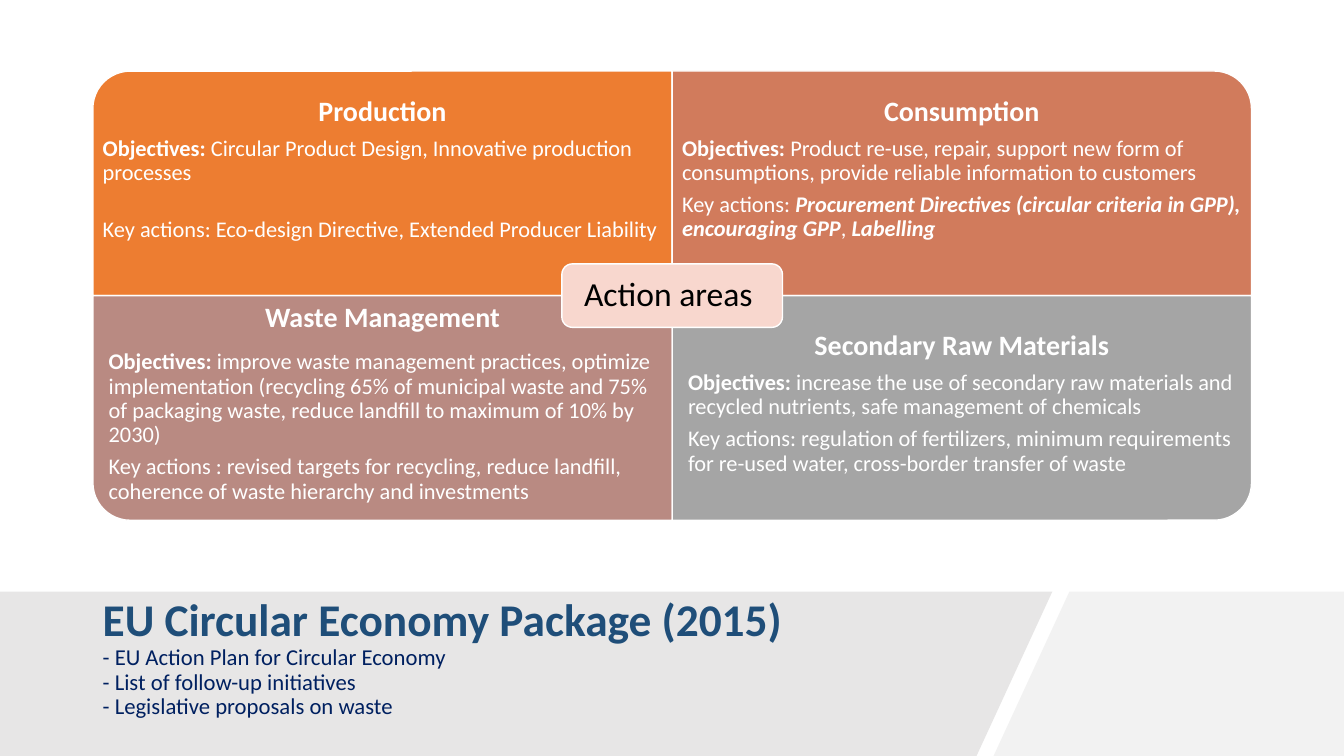
from pptx import Presentation
from pptx.dml.color import RGBColor
from pptx.enum import shapes, text
from pptx.util import Cm, Pt

FONT = "Calibri"
WHITE = "FFFFFF"
SLIDE_W, SLIDE_H = 33.87, 19.05


def rgb(value):
    return RGBColor.from_string(value)


def paint(shape, fill, line=None):
    shape.shadow.inherit = False
    shape.fill.solid()
    shape.fill.fore_color.rgb = rgb(fill)
    if line:
        shape.line.color.rgb = rgb(line)
        shape.line.width = Pt(1)
    else:
        shape.line.fill.background()


def write(frame, paragraphs):
    """Each paragraph: (runs, size, colour, alignment, space after); run: (words, style)."""
    frame.word_wrap = True
    for index, (runs, size, colour, align, after) in enumerate(paragraphs):
        line = frame.paragraphs[0] if index == 0 else frame.add_paragraph()
        line.alignment = align
        line.line_spacing = 0.9
        line.space_after = Pt(after)
        line.font.name = FONT
        line.font.size = Pt(size)
        line.font.color.rgb = rgb(colour)
        for words, style in runs:
            run = line.add_run()
            run.text = words
            if "b" in style:
                run.font.bold = True
            if "i" in style:
                run.font.italic = True


def text_box(slide, left, top, width, height, inset, paragraphs):
    frame = slide.shapes.add_textbox(Cm(left), Cm(top), Cm(width), Cm(height)).text_frame
    frame.margin_left = frame.margin_right = Cm(inset)
    frame.margin_top = frame.margin_bottom = 0
    write(frame, paragraphs)


def add_panel(slide, left, top, width, height, rotation, area):
    """Quadrant whose single rounded corner is turned to the outside."""
    w, h = (height, width) if rotation % 180 else (width, height)
    panel = slide.shapes.add_shape(
        shapes.MSO_SHAPE.ROUND_1_RECTANGLE,
        Cm(left + (width - w) / 2), Cm(top + (height - h) / 2), Cm(w), Cm(h))
    panel.rotation = rotation
    paint(panel, area["fill"], WHITE)

    heading_gap, objective_gap = area["gaps"]
    centre, start = text.PP_ALIGN.CENTER, text.PP_ALIGN.LEFT
    objectives = [("Objectives: ", "b"), (area["objectives"], "")]
    text_box(slide, left, top + area["offset"], width, height - area["offset"], area["inset"], [
        ([(area["heading"], "b")], 20, WHITE, centre, heading_gap),
        (objectives, 16, WHITE, start, objective_gap),
        (area["actions"], 16, WHITE, start, 0),
    ])


def add_matrix(slide, left, top, width, height, areas, centre_label):
    half_w, half_h = width / 2, height / 2
    for index, (area, rotation) in enumerate(zip(areas, (270, 0, 180, 90))):
        row, column = divmod(index, 2)
        add_panel(slide, left + column * half_w, top + row * half_h,
                  half_w, half_h, rotation, area)

    # Label over the crossing
    label_w, label_h = 5.56, 1.6
    label = slide.shapes.add_shape(
        shapes.MSO_SHAPE.ROUNDED_RECTANGLE,
        Cm(left + half_w - label_w / 2), Cm(top + half_h - label_h / 2),
        Cm(label_w), Cm(label_h))
    paint(label, "F8D7CE", WHITE)
    label.text_frame.vertical_anchor = text.MSO_ANCHOR.MIDDLE
    write(label.text_frame, [([(centre_label, "")], 24, "000000", text.PP_ALIGN.CENTER, 0)])


def add_footer(slide, left, top, width, height, title, points):
    # Two bands parted by a slanted gap
    right, bottom = left + width, top + height
    bands = [
        ("F2F2F2", [(26.95, top), (right, top), (right, bottom), (25.04, bottom)]),
        ("E7E6E6", [(left, top), (26.52, top), (24.61, bottom), (left, bottom)]),
    ]
    for fill, corners in bands:
        start, *others = [(Cm(x), Cm(y)) for x, y in corners]
        builder = slide.shapes.build_freeform(*start)
        builder.add_line_segments(others, close=True)
        paint(builder.convert_to_shape(), fill)

    # Title and its points
    align = text.PP_ALIGN.LEFT
    lines = [([(title, "b")], 32.4, "1F4E79", align, 0)]
    lines += [([(point, "")], 16.2, "002060", align, 0) for point in points]
    text_box(slide, left + 2.34, top + 0.14, 22.43, height - 0.3, 0.25, lines)


AREAS = [
    {"heading": "Production", "fill": "ED7D31", "offset": 0.66, "inset": 0.25, "gaps": (7, 23),
     "objectives": "Circular Product Design, Innovative production processes",
     "actions": [("Key actions: Eco-design Directive, Extended Producer Liability", "")]},
    {"heading": "Consumption", "fill": "D17B5C", "offset": 0.66, "inset": 0.25, "gaps": (7, 5.6),
     "objectives": "Product re-use, repair, support new form of consumptions, "
                   "provide reliable information to customers",
     "actions": [("Key actions: ", ""),
                 ("Procurement Directives (circular criteria in GPP), encouraging GPP", "bi"),
                 (",", ""), (" Labelling", "bi")]},
    {"heading": "Waste Management", "fill": "B98A82", "offset": 0.2, "inset": 0.4, "gaps": (12, 6),
     "objectives": "improve waste management practices, optimize implementation "
                   "(recycling 65% of municipal waste and 75% of packaging waste, "
                   "reduce landfill to maximum of 10% by 2030)",
     "actions": [("Key actions : revised targets for recycling, reduce landfill, "
                  "coherence of waste hierarchy and investments", "")]},
    {"heading": "Secondary Raw Materials", "fill": "A5A5A5", "offset": 0.9, "inset": 0.4,
     "gaps": (7, 5.6),
     "objectives": "increase the use of secondary raw materials and recycled nutrients, "
                   "safe management of chemicals",
     "actions": [("Key actions: regulation of fertilizers, minimum requirements "
                  "for re-used water, cross-border transfer of waste", "")]},
]


def main():
    deck = Presentation()
    deck.slide_width, deck.slide_height = Cm(SLIDE_W), Cm(SLIDE_H)
    slide = deck.slides.add_slide(deck.slide_layouts[6])
    add_footer(slide, 0, 14.91, SLIDE_W, SLIDE_H - 14.91, "EU Circular Economy Package (2015)", [
        "- EU Action Plan for Circular Economy",
        "- List of follow-up initiatives",
        "- Legislative proposals on waste",
    ])
    add_matrix(slide, 2.34, 1.79, 29.2, 11.32, AREAS, "Action areas ")
    deck.save("out.pptx")


if __name__ == "__main__":
    main()
